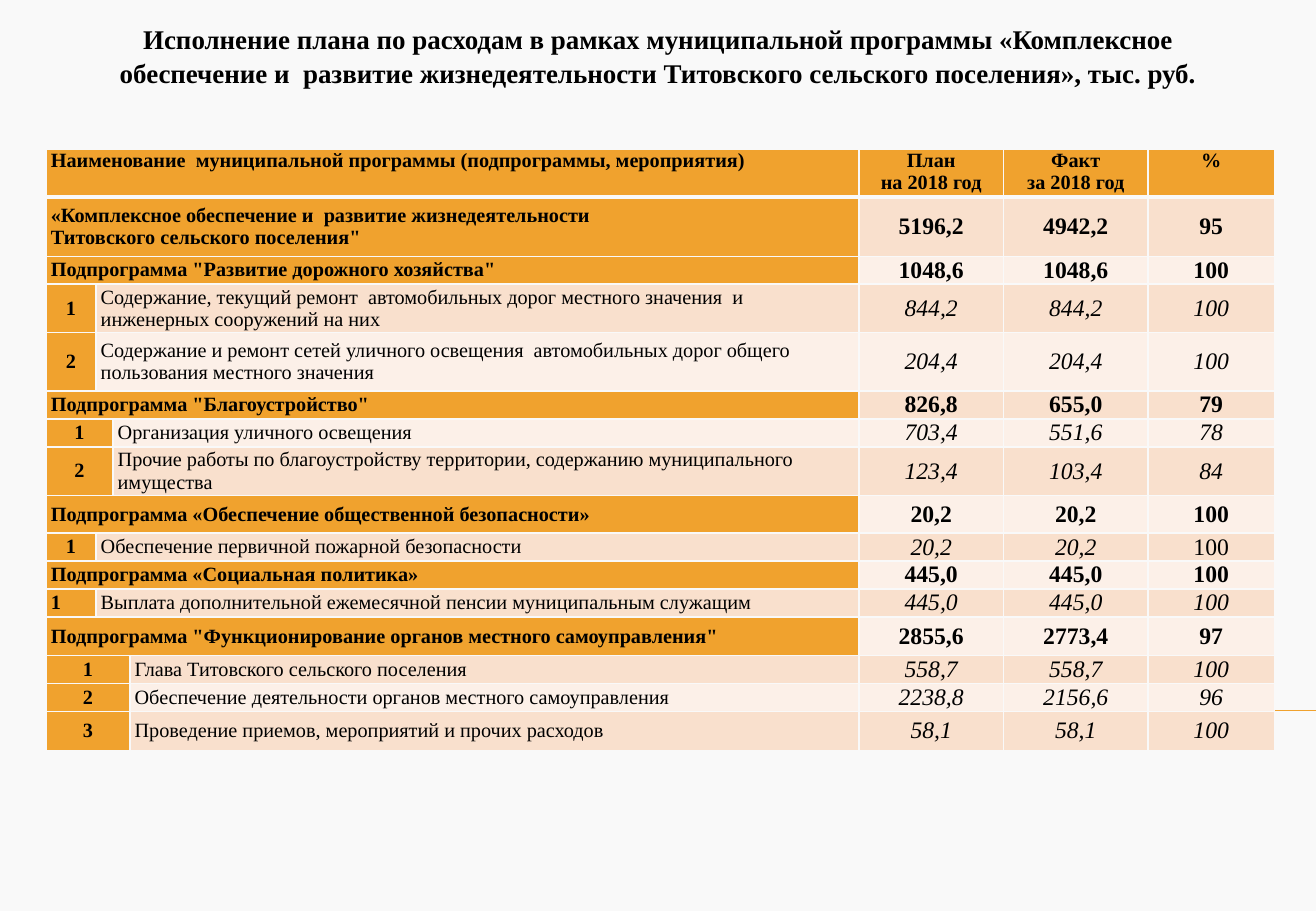
from dataclasses import dataclass

import pptx
import pptx.dml.color
import pptx.enum.shapes
import pptx.enum.text
import pptx.oxml
import pptx.oxml.ns
import pptx.util

ALIGN = pptx.enum.text.PP_ALIGN
ANCHOR = pptx.enum.text.MSO_ANCHOR
SLIDE_WIDTH, SLIDE_HEIGHT = 10.83, 7.5


@dataclass(frozen=True)
class Theme:
    font: str = "Times New Roman"
    text: str = "000000"
    paper: str = "F9F9F9"
    accent: str = "F0A22E"
    bands: tuple[str, str] = ("FCF0E8", "F9E0CD")
    title_size: int = 16
    label_size: int = 12
    value_size: int = 14
    rule: float = 0.75
    border: int = 1
    header_border: int = 3


@dataclass(frozen=True)
class Expense:
    """A budget row; number_span counts the grid columns its number takes."""
    label: str
    plan: str
    fact: str
    percent: str
    height: float = 0.23
    number: str = ""
    number_span: int = 0
    number_align: ALIGN = ALIGN.CENTER
    percent_italic: bool = True


THEME = Theme()
COLUMNS = (0.41, 0.14, 0.14, 6, 1.19, 1.19, 1.04)
LABEL_END = 3
HEADER_HEIGHT = 0.39
TITLE = ("Исполнение плана по расходам в рамках муниципальной программы «Комплексное "
         "обеспечение и  развитие жизнедеятельности Титовского сельского поселения», тыс. руб.")
HEADERS = ("Наименование  муниципальной программы (подпрограммы, мероприятия)",
           "План\nна 2018 год", "Факт\nза 2018 год", "%")
EXPENSES = (
    Expense("«Комплексное обеспечение и  развитие жизнедеятельности\n"
            "Титовского сельского поселения\"", "5196,2", "4942,2", "95", 0.49),
    Expense('Подпрограмма "Развитие дорожного хозяйства"', "1048,6", "1048,6", "100"),
    Expense("Содержание, текущий ремонт  автомобильных дорог местного значения  и "
            "инженерных сооружений на них", "844,2", "844,2", "100", 0.4, "1", 1),
    Expense("Содержание и ремонт сетей уличного освещения  автомобильных дорог общего "
            "пользования местного значения", "204,4", "204,4", "100", 0.48, "2", 1),
    Expense('Подпрограмма "Благоустройство"', "826,8", "655,0", "79"),
    Expense("Организация уличного освещения", "703,4", "551,6", "78",
            number="1", number_span=2),
    Expense("Прочие работы по благоустройству территории, содержанию муниципального "
            "имущества", "123,4", "103,4", "84", 0.4, "2", 2),
    Expense("Подпрограмма «Обеспечение общественной безопасности»",
            "20,2", "20,2", "100", 0.31),
    Expense("Обеспечение первичной пожарной безопасности", "20,2", "20,2", "100",
            number="1", number_span=1, percent_italic=False),
    Expense("Подпрограмма «Социальная политика»", "445,0", "445,0", "100"),
    Expense("Выплата дополнительной ежемесячной пенсии муниципальным служащим",
            "445,0", "445,0", "100", number="1", number_span=1, number_align=ALIGN.LEFT),
    Expense('Подпрограмма "Функционирование органов местного самоуправления"',
            "2855,6", "2773,4", "97", 0.32),
    Expense("Глава Титовского сельского поселения", "558,7", "558,7", "100",
            number="1", number_span=3),
    Expense("Обеспечение деятельности органов местного самоуправления",
            "2238,8", "2156,6", "96", number="2", number_span=3),
    Expense("Проведение приемов, мероприятий и прочих расходов",
            "58,1", "58,1", "100", 0.32, "3", 3),
)


def across(percent: float) -> int:
    return pptx.util.Inches(SLIDE_WIDTH * percent / 100)


def down(percent: float) -> int:
    return pptx.util.Inches(SLIDE_HEIGHT * percent / 100)


def rgb(code: str) -> pptx.dml.color.RGBColor:
    return pptx.dml.color.RGBColor.from_string(code)


def write(frame, text: str, *, size: float = THEME.label_size, bold: bool = False,
          italic: bool = False, align: ALIGN = ALIGN.LEFT, spacing: float = 1.0) -> None:
    """Fill a text frame, one paragraph for each line of text."""
    frame.text = text
    for paragraph in frame.paragraphs:
        paragraph.alignment = align
        paragraph.line_spacing = spacing
        paragraph.space_before = paragraph.space_after = pptx.util.Pt(0)
        for run in paragraph.runs:
            font = run.font
            font.name, font.size = THEME.font, pptx.util.Pt(size)
            font.bold, font.italic = bold, italic
            font.color.rgb = rgb(THEME.text)


def add_borders(cell, top: float, bottom: float) -> None:
    properties = cell._tc.get_or_add_tcPr()
    sides = {"L": THEME.border, "R": THEME.border, "T": top, "B": bottom}
    for side, points in sides.items():
        properties.append(pptx.oxml.parse_xml(
            f'<a:ln{side} {pptx.oxml.ns.nsdecls("a")} w="{pptx.util.Pt(points)}">'
            f'<a:solidFill><a:srgbClr val="{THEME.paper}"/></a:solidFill></a:ln{side}>'))


def fill_cells(table, row: int, first: int, last: int, text: str, fill: str,
               margin: float = 0.04, **text_format) -> None:
    """Merge the columns first to last of a row, then fill and write them."""
    for column in range(first, last + 1):
        cell = table.cell(row, column)
        add_borders(cell, THEME.header_border if row == 1 else THEME.border,
                    THEME.header_border if row == 0 else THEME.border)
        cell.fill.solid()
        cell.fill.fore_color.rgb = rgb(fill)
    cell = table.cell(row, first)
    if last > first:
        cell.merge(table.cell(row, last))
    cell.margin_left = cell.margin_right = pptx.util.Inches(margin)
    cell.margin_top = cell.margin_bottom = 0
    cell.vertical_anchor = ANCHOR.MIDDLE if row else ANCHOR.TOP
    write(cell.text_frame, text, **text_format)


def fill_expense(table, row: int, expense: Expense) -> None:
    band = THEME.bands[row % 2]
    span = expense.number_span
    is_item = span > 0
    if is_item:
        fill_cells(table, row, 0, span - 1, expense.number, THEME.accent,
                   bold=True, align=expense.number_align)
    fill_cells(table, row, span, LABEL_END, expense.label,
               band if is_item else THEME.accent, bold=not is_item)
    amounts = ((expense.plan, True), (expense.fact, True),
               (expense.percent, expense.percent_italic))
    for column, (amount, italic) in enumerate(amounts, LABEL_END + 1):
        fill_cells(table, row, column, column, amount, band, margin=0.05,
                   size=THEME.value_size, bold=not is_item,
                   italic=is_item and italic, align=ALIGN.CENTER)


def add_title(slide) -> None:
    title = slide.shapes.title
    title.left, title.top = across(4.2), down(1.6)
    title.width, title.height = across(91.6), down(12.1)
    frame = title.text_frame
    frame.word_wrap = True
    frame.auto_size = pptx.enum.text.MSO_AUTO_SIZE.NONE
    frame.vertical_anchor = ANCHOR.TOP
    write(frame, TITLE, size=THEME.title_size, bold=True, align=ALIGN.CENTER, spacing=1.06)


def add_rule(slide) -> None:
    rule = slide.shapes.add_connector(pptx.enum.shapes.MSO_CONNECTOR.STRAIGHT,
                                      across(5.6), down(78), across(100), down(78))
    rule.line.color.rgb = rgb(THEME.accent)
    rule.line.width = pptx.util.Pt(THEME.rule)
    rule._element.spPr.append(pptx.oxml.parse_xml(
        f'<a:effectLst {pptx.oxml.ns.nsdecls("a")}/>'))


def add_budget(slide) -> None:
    heights = [HEADER_HEIGHT, *(expense.height for expense in EXPENSES)]
    table = slide.shapes.add_table(
        len(heights), len(COLUMNS), across(3.5), down(16.4),
        pptx.util.Inches(sum(COLUMNS)), pptx.util.Inches(sum(heights))).table
    table.horz_banding = False
    for column, width in zip(table.columns, COLUMNS):
        column.width = pptx.util.Inches(width)
    for row, height in zip(table.rows, heights):
        row.height = pptx.util.Inches(height)
    for column, header in enumerate(HEADERS, LABEL_END):
        is_label = column == LABEL_END
        fill_cells(table, 0, 0 if is_label else column, column, header, THEME.accent,
                   bold=True, align=ALIGN.LEFT if is_label else ALIGN.CENTER)
    for row, expense in enumerate(EXPENSES, 1):
        fill_expense(table, row, expense)


def main() -> None:
    deck = pptx.Presentation()
    deck.slide_width, deck.slide_height = across(100), down(100)
    slide = deck.slides.add_slide(deck.slide_layouts[5])
    slide.background.fill.solid()
    slide.background.fill.fore_color.rgb = rgb(THEME.paper)
    add_title(slide)
    add_rule(slide)
    add_budget(slide)
    deck.save("out.pptx")


if __name__ == "__main__":
    main()
